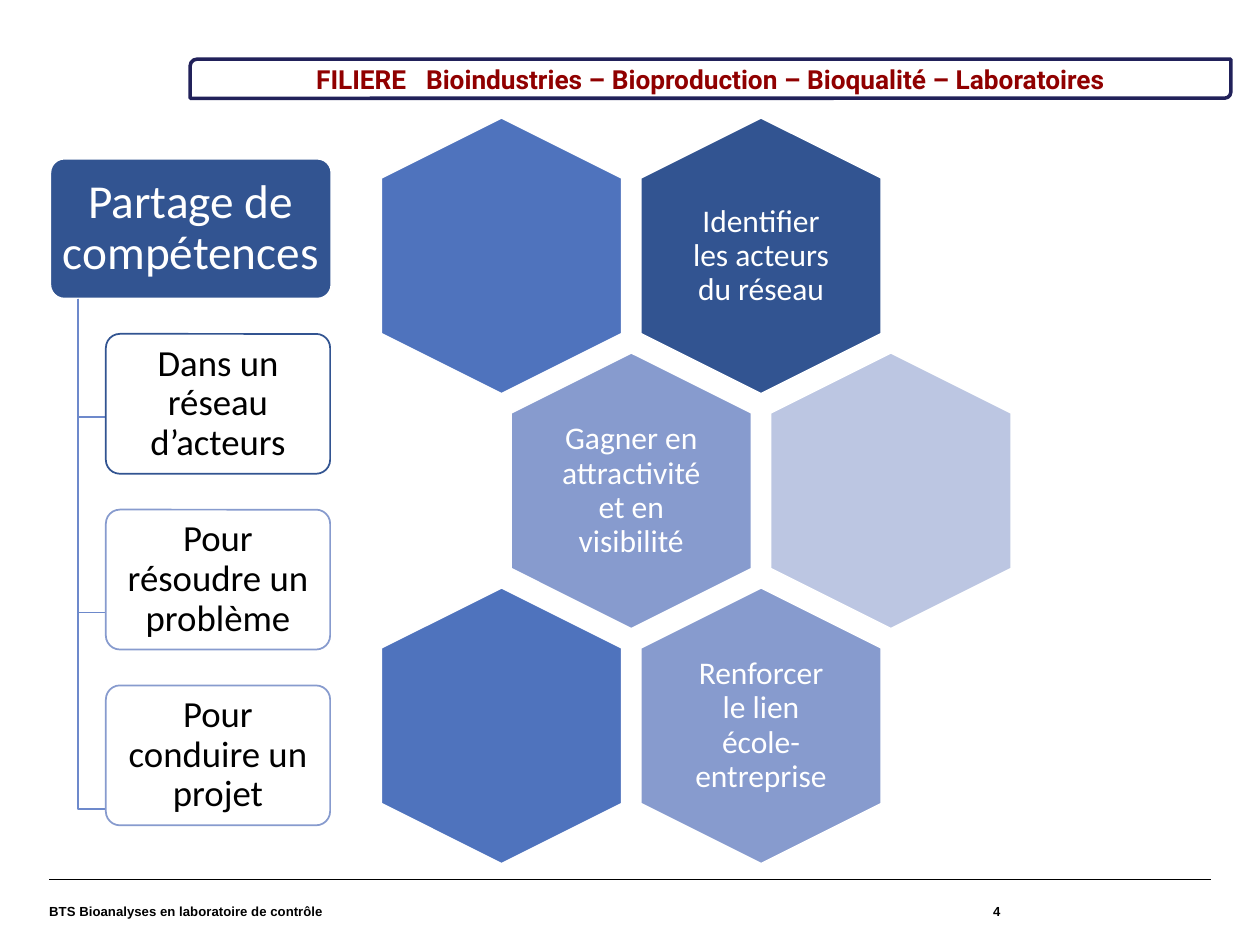
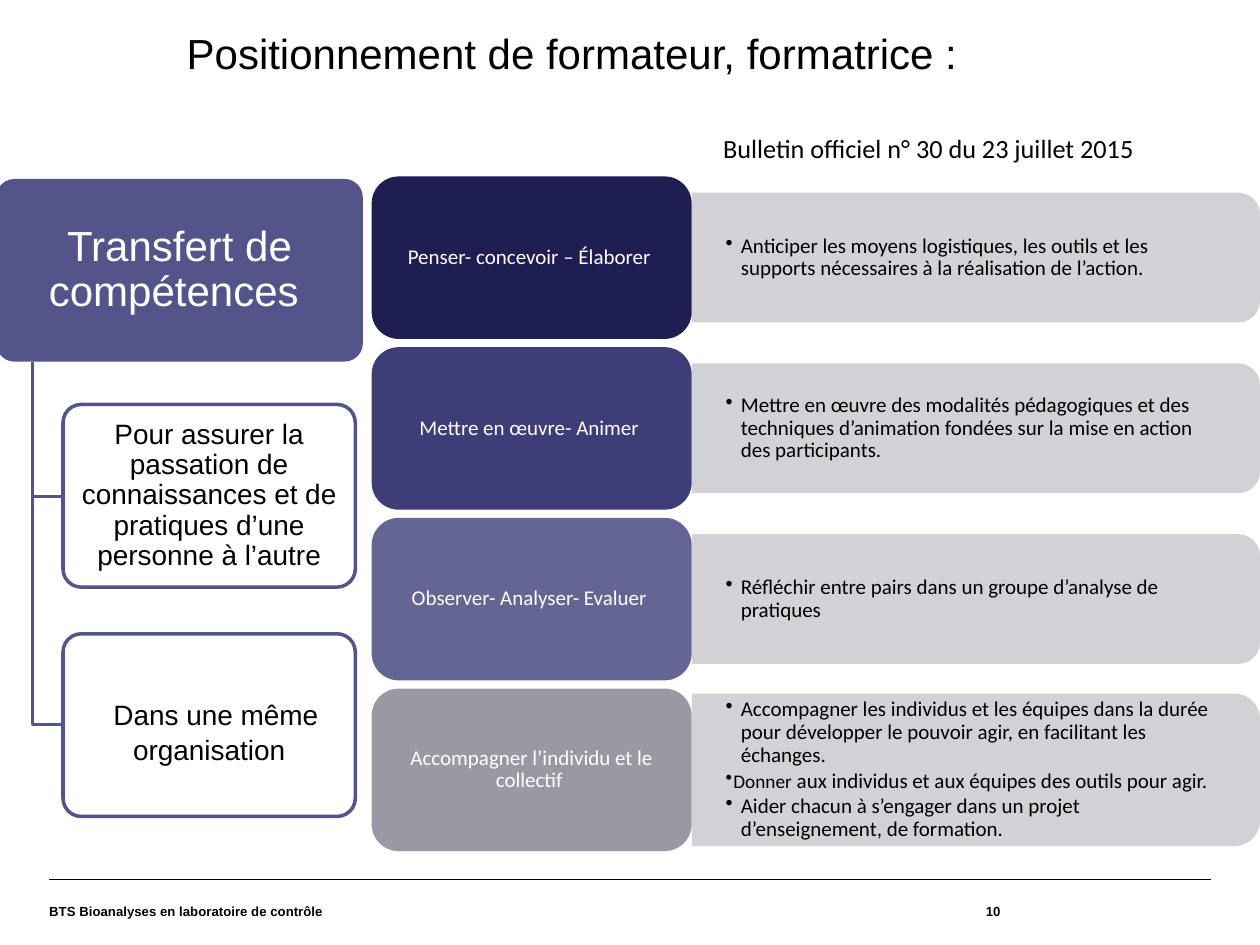
from dataclasses import dataclass
from typing import NamedTuple, Optional

from lxml.etree import SubElement
from pptx import Presentation
from pptx.dml.color import RGBColor
from pptx.enum.shapes import MSO_CONNECTOR, MSO_SHAPE
from pptx.enum.text import MSO_ANCHOR, PP_ALIGN
from pptx.oxml.ns import qn
from pptx.util import Inches, Pt

BLACK = RGBColor(0x00, 0x00, 0x00)
WHITE = RGBColor(0xFF, 0xFF, 0xFF)
RED = RGBColor(0x90, 0x00, 0x00)
NAVY = RGBColor(0x21, 0x21, 0x5A)
DARK = RGBColor(0x32, 0x54, 0x91)
BLUE = RGBColor(0x4F, 0x73, 0xBD)
STEM = RGBColor(0x6D, 0x89, 0xCB)
SOFT = RGBColor(0x87, 0x9B, 0xCE)
PALE = RGBColor(0xBC, 0xC6, 0xE2)
PLUM = RGBColor(0x53, 0x54, 0x8A)
INK = RGBColor(0x1E, 0x1E, 0x52)
INDIGO = RGBColor(0x3D, 0x3D, 0x78)
MAUVE = RGBColor(0x65, 0x65, 0x94)
GREY = RGBColor(0x99, 0x99, 0xA4)
PANEL = RGBColor(0xCD, 0xCD, 0xD2)


class Box(NamedTuple):
    """Left, top, width and height in inches."""
    x: float
    y: float
    w: float
    h: float


class Run(NamedTuple):
    """Text with its own size and letter spacing, if any."""
    text: str
    size: Optional[float] = None
    gap: int = 0


class Para(NamedTuple):
    """Runs of one paragraph and its bullet indent."""
    runs: list[Run]
    dent: float = 0


@dataclass
class Style:
    """How a text is set."""
    font: str
    size: float
    color: RGBColor = BLACK
    bold: bool = False
    align: PP_ALIGN = PP_ALIGN.CENTER
    anchor: MSO_ANCHOR = MSO_ANCHOR.MIDDLE
    lead: float = 0.9
    after: float = 0
    pad: tuple[float, float] = (0, 0)


class Leaf(NamedTuple):
    """A box hanging from the stem of a tree."""
    runs: list[Run]
    edge: RGBColor
    join: float


@dataclass
class Tree:
    """A head box with leaves below it."""
    head: Box
    title: str
    fill: RGBColor
    top: Style
    leaf: Box
    step: float
    body: Style
    stem: float
    color: RGBColor
    width: float
    items: list[Leaf]
    rim: Optional[RGBColor] = None


class Hex(NamedTuple):
    """A hexagon at a half-column and row of the comb."""
    col: int
    row: int
    fill: RGBColor
    text: str = ""


class Card(NamedTuple):
    """A step and the panel that explains it."""
    text: str
    fill: RGBColor
    notes: list[Para]
    tall: float = 1.03


def plain(text: str, dent: float = 0) -> list[Para]:
    """Wrap a text as one paragraph."""
    return [Para([Run(text)], dent)]


def write(shape, paras: list[Para], style: Style) -> None:
    """Fill a shape with styled paragraphs."""
    frame = shape.text_frame
    frame.word_wrap = True
    frame.vertical_anchor = style.anchor
    frame.margin_left = frame.margin_right = Inches(style.pad[0])
    frame.margin_top = frame.margin_bottom = Inches(style.pad[1])
    for i, item in enumerate(paras):
        para = frame.add_paragraph() if i else frame.paragraphs[0]
        para.alignment = style.align
        para.line_spacing = style.lead
        para.space_after = Pt(style.after)
        if item.dent:
            props = para._p.get_or_add_pPr()
            props.set("marL", str(Inches(item.dent)))
            props.set("indent", str(-Inches(item.dent)))
            SubElement(props, qn("a:buChar")).set("char", "•")
        for part in item.runs:
            run = para.add_run()
            run.text = part.text
            run.font.name, run.font.bold = style.font, style.bold
            run.font.size = Pt(part.size or style.size)
            run.font.color.rgb = style.color
            if part.gap:
                run._r.get_or_add_rPr().set("spc", str(part.gap))


def label(slide, box: Box, paras: list[Para], style: Style) -> None:
    """Add a text box."""
    write(slide.shapes.add_textbox(*map(Inches, box)), paras, style)


def block(slide, kind: MSO_SHAPE, box: Box, fill: RGBColor, edge: Optional[RGBColor] = None,
          width: float = 1, alpha: int = 100, turn: bool = False):
    """Add a filled preset shape that covers the box, turned or not."""
    x, y, w, h = box
    if turn:
        box = Box(x + (w - h) / 2, y + (h - w) / 2, h, w)
    shape = slide.shapes.add_shape(kind, *map(Inches, box))
    shape.rotation = 90 if turn else 0
    shape.shadow.inherit = False
    shape.fill.solid()
    shape.fill.fore_color.rgb = fill
    if alpha < 100:
        tint = shape._element.spPr.find(".//" + qn("a:srgbClr"))
        SubElement(tint, qn("a:alpha")).set("val", str(alpha * 1000))
    if edge is None:
        shape.line.fill.background()
    else:
        shape.line.color.rgb = edge
        shape.line.width = Pt(width)
    return shape


def elbow(slide, x: float, y: float, end: tuple[float, float], tree: Tree) -> None:
    """Draw a line down and then right."""
    pen = slide.shapes.build_freeform(Inches(x), Inches(y))
    pen.add_line_segments([tuple(map(Inches, p)) for p in ((x, end[1]), end)], close=False)
    shape = pen.convert_to_shape()
    shape.shadow.inherit = False
    shape.fill.background()
    shape.line.color.rgb = tree.color
    shape.line.width = Pt(tree.width)


def grow(slide, tree: Tree) -> None:
    """Draw a tree of rounded boxes."""
    kind = MSO_SHAPE.ROUNDED_RECTANGLE
    head = block(slide, kind, tree.head, tree.fill, tree.rim)
    head.adjustments[0] = 0.1
    write(head, plain(tree.title), tree.top)
    for i, item in enumerate(tree.items):
        box = tree.leaf._replace(y=tree.leaf.y + i * tree.step)
        elbow(slide, tree.stem, tree.head.y + tree.head.h, (box.x, item.join), tree)
        leaf = block(slide, kind, box, WHITE, item.edge, tree.width, 90)
        leaf.adjustments[0] = 0.1
        write(leaf, [Para(item.runs)], tree.body)


def comb(slide, cells: list[Hex]) -> None:
    """Draw the hexagons."""
    style = Style("Calibri", 18, WHITE, pad=(0.07, 0.07))
    for cell in cells:
        x, y = 3.98 + 1.03 * cell.col, 2.03 + 1.865 * cell.row
        box = Box(x - 0.955, y - 1.095, 1.91, 2.19)
        block(slide, MSO_SHAPE.HEXAGON, box, cell.fill, WHITE, turn=True)
        if cell.text:
            label(slide, Box(x - 0.655, y - 0.755, 1.31, 1.51), plain(cell.text), style)


def stack(slide, cards: list[Card]) -> None:
    """Draw the steps with their panels."""
    name = Style("Calibri", 12, WHITE, pad=(0.11, 0.09))
    note = Style("Calibri", 12, align=PP_ALIGN.LEFT, after=1.8, pad=(0.27, 0.14))
    for i, card in enumerate(cards):
        box = Box(2.95, 1.4 + 1.355 * i, 2.54, 1.29)
        panel = Box(box.x + box.w, box.y + (box.h - card.tall) / 2, 4.51, card.tall)
        block(slide, MSO_SHAPE.ROUND_2_SAME_RECTANGLE, panel, PANEL, alpha=90, turn=True)
        label(slide, Box(panel.x, panel.y + 0.05, 4.46, panel.h - 0.1), card.notes, note)
        step = block(slide, MSO_SHAPE.ROUNDED_RECTANGLE, box, card.fill)
        write(step, plain(card.text), name)


def footer(slide, page: int) -> None:
    """Draw the rule, course name and page number."""
    ends = map(Inches, (0.39, 6.98, 9.61, 6.98))
    rule = slide.shapes.add_connector(MSO_CONNECTOR.STRAIGHT, *ends)
    rule.line.color.rgb = BLACK
    rule.line.width = Pt(0.8)
    SubElement(rule._element.spPr, qn("a:effectLst"))
    for x, w, text, align in (
            (0.39, 6.45, "BTS Bioanalyses en laboratoire de contrôle", PP_ALIGN.LEFT),
            (6.85, 1.09, str(page), PP_ALIGN.RIGHT)):
        style = Style("Arial", 7.5, bold=True, align=align, lead=1)
        label(slide, Box(x, 6.97, w, 0.52), plain(text), style)


def share(slide) -> None:
    """Build the slide on sharing skills."""
    grow(slide, Tree(
        Box(0.4, 1.26, 2.23, 1.11), "Partage de compétences ", DARK,
        Style("Calibri", 27, WHITE, pad=(0.04, 0.04)),
        Box(0.84, 2.65, 1.78, 1.11), 1.395,
        Style("Calibri", 21, pad=(0.07, 0.06)), 0.62, STEM, 1,
        [Leaf([Run("Dans un réseau d’acteurs")], DARK, 3.31),
         Leaf([Run("Pour résoudre un problème")], SOFT, 4.86),
         Leaf([Run("Pour conduire un projet")], SOFT, 6.42)], WHITE))
    comb(slide, [
        Hex(2, 0, DARK, "Identifier les acteurs du réseau"), Hex(0, 0, BLUE),
        Hex(1, 1, SOFT, "Gagner en attractivité et en visibilité"), Hex(3, 1, PALE),
        Hex(2, 2, SOFT, "Renforcer le lien école-entreprise"), Hex(0, 2, BLUE)])
    band = block(slide, MSO_SHAPE.ROUND_2_DIAG_RECTANGLE,
                 Box(1.51, 0.47, 8.26, 0.31), WHITE, NAVY, 2)
    title = [Run("FILIERE"), Run(" ", gap=750),
             Run("Bioindustries – Bioproduction – Bioqualité – Laboratoires")]
    write(band, [Para(title)], Style("Roboto", 15, RED, True, lead=1, pad=(0.08, 0.04)))


def train(slide) -> None:
    """Build the slide on the trainer's role."""
    grow(slide, Tree(
        Box(-0.03, 1.42, 2.91, 1.45), "Transfert de compétences ", PLUM,
        Style("Arial", 24, WHITE, pad=(0.09, 0.07)),
        Box(0.5, 3.21, 2.32, 1.45), 1.82,
        Style("Arial", 16, pad=(0.08, 0.06)), 0.26, PLUM, 2,
        [Leaf([Run("Pour assurer la passation de connaissances et de pratiques "
                   "d’une personne à l’autre")], PLUM, 3.94),
         Leaf([Run(" ", 28), Run("Dans une même organisation")], PLUM, 5.75)]))
    stack(slide, [
        Card("Penser- concevoir – Élaborer ", INK, plain(
            "Anticiper les moyens logistiques, les outils et les supports "
            "nécessaires à la réalisation de l’action.", 0.12)),
        Card("Mettre en œuvre- Animer ", INDIGO, plain(
            "Mettre en œuvre des modalités pédagogiques et des techniques "
            "d’animation fondées sur la mise en action des participants.", 0.12)),
        Card("Observer- Analyser- Evaluer ", MAUVE, plain(
            "Réfléchir entre pairs dans un groupe d’analyse de pratiques", 0.12)),
        Card("Accompagner l’individu et le collectif ", GREY, [
            Para([Run("Accompagner les individus et les équipes dans la durée pour "
                      "développer le pouvoir agir, en facilitant les échanges.")], 0.12),
            Para([Run("Donner", 11),
                  Run(" aux individus et aux équipes des outils pour agir.")], 0.06),
            Para([Run("Aider chacun à s’engager dans un projet d’enseignement, "
                      "de formation.")], 0.12)], 1.21)])
    label(slide, Box(5.64, 1, 4.11, 0.35), plain("Bulletin officiel n° 30 du 23 juillet 2015"),
          Style("Calibri", 15, BLACK, False, PP_ALIGN.LEFT, MSO_ANCHOR.TOP, 1, 0, (0.1, 0.05)))
    label(slide, Box(0.57, 0.27, 8.03, 0.34),
          plain("Positionnement de formateur, formatrice : "), Style("Arial", 24))


deck = Presentation()
deck.slide_width, deck.slide_height = Inches(10), Inches(7.5)
for draw, page in ((share, 4), (train, 10)):
    slide = deck.slides.add_slide(deck.slide_layouts[6])
    draw(slide)
    footer(slide, page)
deck.save("out.pptx")
